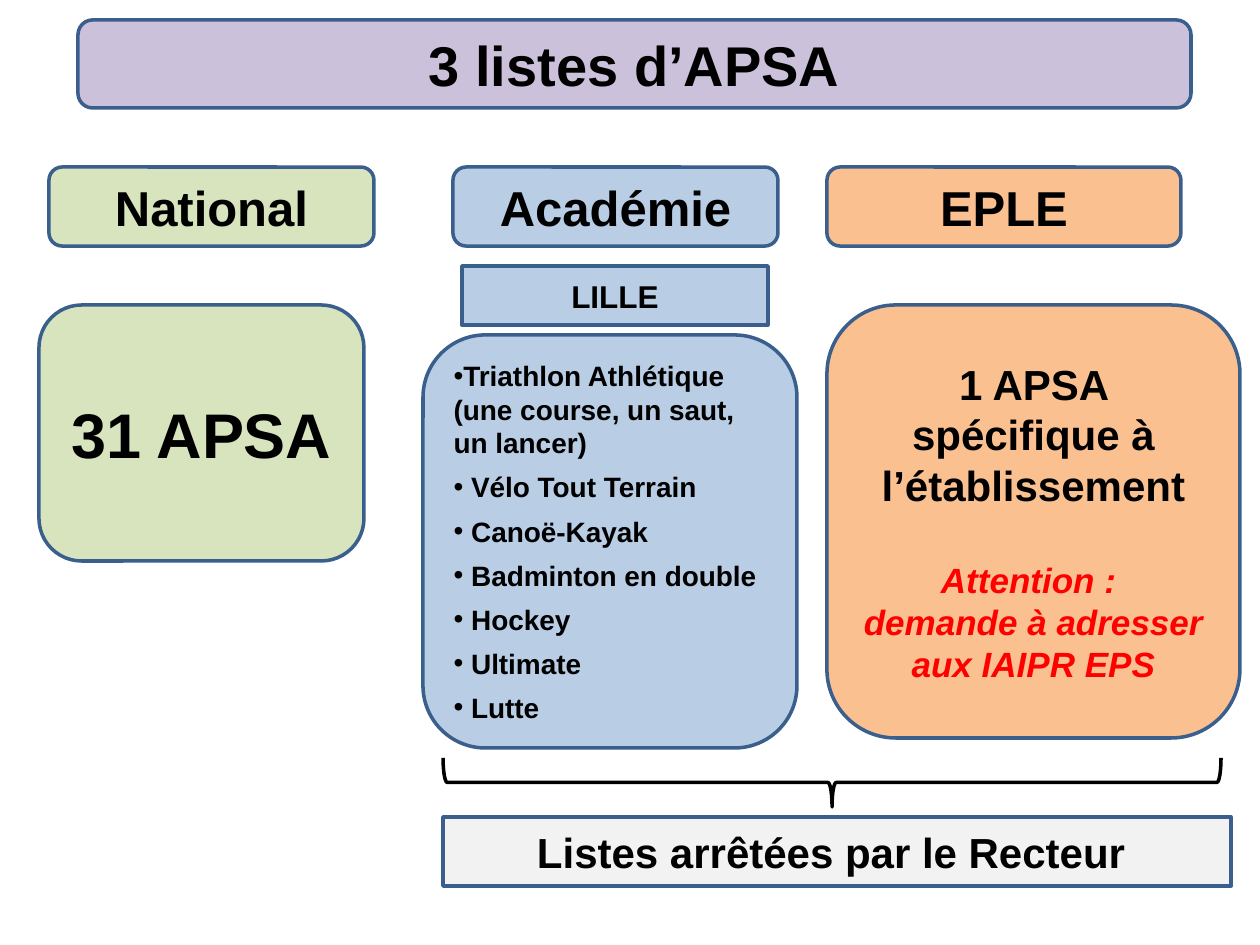
from lxml import etree
from pptx import Presentation
from pptx.dml.color import RGBColor
from pptx.enum.shapes import MSO_SHAPE
from pptx.enum.text import MSO_ANCHOR, PP_ALIGN
from pptx.oxml.ns import qn
from pptx.util import Emu, Pt

ROUND, RECT = MSO_SHAPE.ROUNDED_RECTANGLE, MSO_SHAPE.RECTANGLE
BRACE = MSO_SHAPE.RIGHT_BRACE
CENTER, LEFT = PP_ALIGN.CENTER, PP_ALIGN.LEFT
MIDDLE = MSO_ANCHOR.MIDDLE

PURPLE, GREEN, BLUE, ORANGE, GREY = "CCC1DA", "D7E4BD", "B9CDE5", "FAC090", "F2F2F2"
BORDER, BLACK, RED = "3A5F8C", "000000", "FF0000"

SPORTS = [
    "Triathlon Athlétique (une course, un saut, un lancer)",
    " Vélo Tout Terrain",
    " Canoë-Kayak",
    " Badminton en double",
    " Hockey",
    " Ultimate",
    " Lutte",
]


def px(n):
    return Emu(round(n * 914400 / 126))


def rgb(value):
    return RGBColor.from_string(value)


def add_shape(s, kind, box, fill, line):
    sp = s.shapes.add_shape(kind, *(px(n) for n in box))
    sp.shadow.inherit = False
    if fill:
        sp.fill.solid()
        sp.fill.fore_color.rgb = rgb(fill)
    else:
        sp.fill.background()
    sp.line.color.rgb = rgb(line)
    sp.line.width = Pt(2)
    return sp


def add_paragraph(tf, text, size, color=BLACK, italic=False, align=CENTER,
                  before=0, bullet=False):
    """Write into the empty first paragraph, or append one."""
    p = tf.paragraphs[0] if not tf.text else tf.add_paragraph()
    p.alignment = align
    p.space_before = Pt(before)
    if bullet:
        pPr = p._p.get_or_add_pPr()
        etree.SubElement(pPr, qn("a:buFont"), typeface="Arial")
        etree.SubElement(pPr, qn("a:buChar"), char="•")
    r = p.add_run()
    r.text = text
    font = {"name": "Arial", "size": Pt(size), "bold": True, "italic": italic}
    for name, value in font.items():
        setattr(r.font, name, value)
    r.font.color.rgb = rgb(color)


def add_panel(s, kind, box, fill, paragraphs):
    sp = add_shape(s, kind, box, fill, BORDER)
    tf = sp.text_frame
    tf.word_wrap = True
    tf.vertical_anchor = MIDDLE
    for paragraph in paragraphs:
        add_paragraph(tf, **paragraph)


def add_column(s, x, y, fill, panels):
    """Place panels given as (kind, box, paragraphs), boxes relative to x, y."""
    for kind, (left, top, w, h), paragraphs in panels:
        add_panel(s, kind, (x + left, y + top, w, h), fill, paragraphs)


def add_conclusion(s, x, y, w, h):
    """Brace pointing down at the closing statement."""
    span, depth = w - 10, 49
    brace = add_shape(s, BRACE, (x + (span - depth) / 2, y - (span - depth) / 2,
                                 depth, span), None, BLACK)
    brace.rotation = 90
    add_panel(s, RECT, (x, y + h - 69, w, 69), GREY,
              [{"text": "Listes arrêtées par le Recteur ", "size": 24}])


def main():
    prs = Presentation()
    prs.slide_width, prs.slide_height = px(1260), px(945)
    s = prs.slides.add_slide(prs.slide_layouts[6])

    add_panel(s, ROUND, (78, 20, 1113, 88), PURPLE,
              [{"text": "3 listes d’APSA", "size": 32}])

    add_column(s, 39, 167, GREEN, [
        (ROUND, (10, 0, 325, 79), [{"text": "National", "size": 28}]),
        (ROUND, (0, 138, 325, 256), [{"text": "31 APSA", "size": 36}]),
    ])
    add_column(s, 423, 167, BLUE, [
        (ROUND, (30, 0, 325, 79), [{"text": "Académie", "size": 28}]),
        (ROUND, (0, 168, 374, 413), [
            {"text": sport, "size": 16, "align": LEFT, "bullet": True,
             "before": 6 if i else 0}
            for i, sport in enumerate(SPORTS)]),
        (RECT, (39, 99, 306, 59), [{"text": "LILLE", "size": 18}]),
    ])
    add_column(s, 827, 167, ORANGE, [
        (ROUND, (0, 0, 354, 79), [{"text": "EPLE", "size": 28}]),
        (ROUND, (0, 138, 413, 433), [
            {"text": "1 APSA spécifique à l’établissement", "size": 24},
            {"text": "Attention : ", "size": 20, "color": RED, "italic": True,
             "before": 28},
            {"text": "demande à adresser aux IAIPR EPS", "size": 20,
             "color": RED, "italic": True},
        ]),
    ])

    add_conclusion(s, 443, 758, 788, 128)
    prs.save("out.pptx")


if __name__ == "__main__":
    main()
